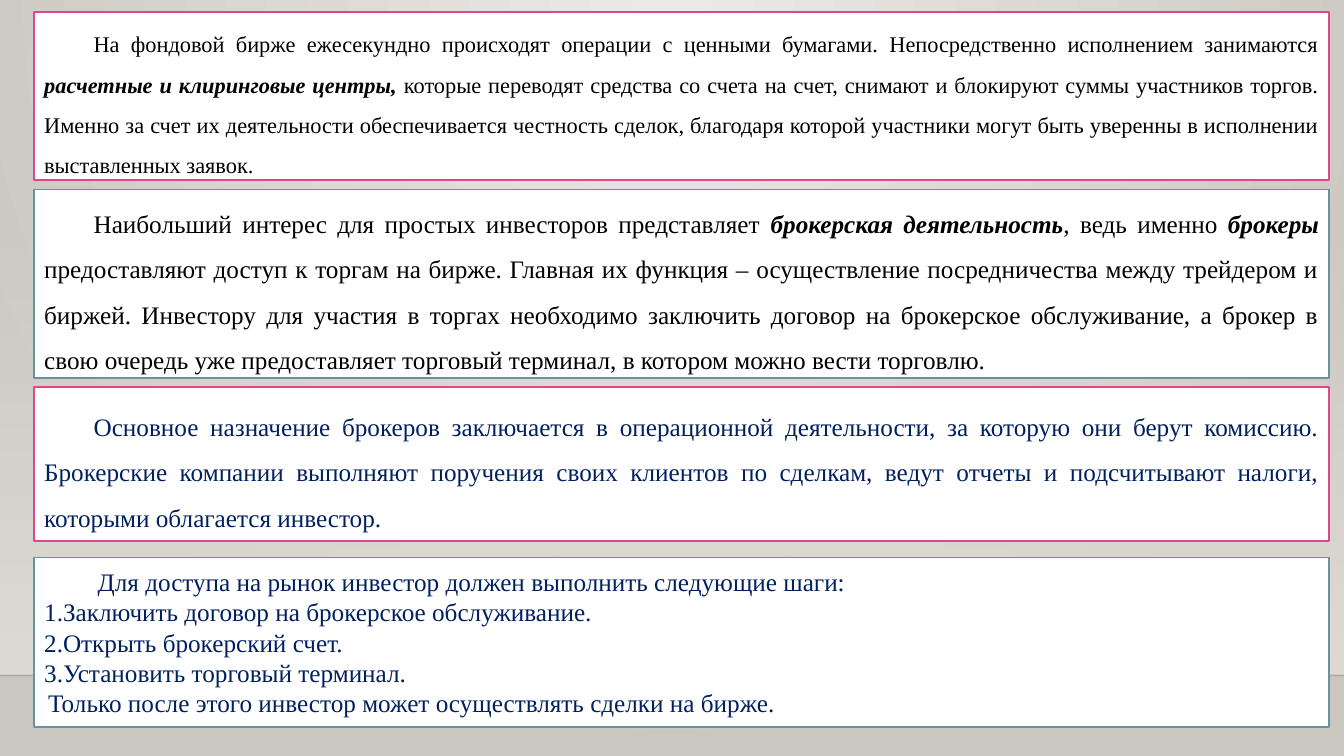
"""Build a slide on settlement centres, brokers and the steps to enter the market."""
from lxml import etree
from pptx import Presentation
from pptx.dml.color import RGBColor
from pptx.enum.shapes import MSO_CONNECTOR, MSO_SHAPE
from pptx.enum.text import MSO_ANCHOR, MSO_AUTO_SIZE, PP_ALIGN
from pptx.oxml.ns import qn
from pptx.util import Inches, Pt

RECTANGLE = MSO_SHAPE.RECTANGLE
STRAIGHT = MSO_CONNECTOR.STRAIGHT
TOP, MIDDLE = MSO_ANCHOR.TOP, MSO_ANCHOR.MIDDLE
GROW, FIXED = MSO_AUTO_SIZE.SHAPE_TO_FIT_TEXT, MSO_AUTO_SIZE.NONE
JUSTIFY = PP_ALIGN.JUSTIFY
PINK, TEAL, BLACK, NAVY = "DE478E", "6892A0", "000000", "002060"


def color(value):
    return RGBColor.from_string(value)


def add_xml(parent, tag, **attributes):
    values = {name: str(value) for name, value in attributes.items()}
    return etree.SubElement(parent, qn(tag), values)


prs = Presentation()
prs.slide_width, prs.slide_height = Inches(13.33), Inches(7.5)
slide = prs.slides.add_slide(prs.slide_layouts[6])

backdrop = slide.background.fill
backdrop.gradient()
for stop, shade in zip(backdrop.gradient_stops, ("ECEAE7", "CAC7C1")):
    stop.color.rgb = color(shade)
    stop.position = 0 if shade == "ECEAE7" else 1
gradient = slide._element.find(".//" + qn("a:gradFill"))
gradient.remove(gradient.find(qn("a:lin")))
glow = add_xml(gradient, "a:path", path="circle")
add_xml(glow, "a:fillToRect", l=43000, t=0, r=43000, b=100000)

wall = slide.shapes.add_shape(RECTANGLE, 0, Inches(2.21), prs.slide_width, Inches(4.49))
wall.shadow.inherit = False
wall.line.fill.background()
wall.fill.gradient()
for position, stop in enumerate(wall.fill.gradient_stops):
    stop.color.rgb = color("DFDBD5")
    stop.position = position
wall.fill.gradient_angle = 270
add_xml(wall._element.find(".//" + qn("a:srgbClr")), "a:alpha", val=0)

horizon = slide.shapes.add_connector(STRAIGHT, 0, Inches(6.7), prs.slide_width, Inches(6.7))
horizon.line.width = Pt(1)
horizon.line.color.rgb = color("000001")
add_xml(horizon._element.find(".//" + qn("a:srgbClr")), "a:alpha", val=20000)
add_xml(horizon._element.spPr, "a:effectLst")

centres = [
    ("На фондовой бирже ежесекундно происходят операции с ценными бумагами. "
     "Непосредственно исполнением занимаются ", False),
    ("расчетные и клиринговые центры,", True),
    (" которые переводят средства со счета на счет, снимают и блокируют суммы участников "
     "торгов. Именно за счет их деятельности обеспечивается честность сделок, благодаря "
     "которой участники могут быть уверенны в исполнении выставленных заявок.", False),
]
brokerage = [
    ("Наибольший интерес для простых инвесторов представляет ", False),
    ("брокерская деятельность", True),
    (", ведь именно ", False),
    ("брокеры ", True),
    ("предоставляют доступ к торгам на бирже. Главная их функция – осуществление "
     "посредничества между трейдером и биржей. Инвестору для участия в торгах необходимо "
     "заключить договор на брокерское обслуживание, а брокер в свою очередь уже "
     "предоставляет торговый терминал, в котором можно вести торговлю.", False),
]
purpose = [
    ("Основное назначение брокеров заключается в операционной деятельности, за которую они "
     "берут комиссию. Брокерские компании выполняют поручения своих клиентов по сделкам, "
     "ведут отчеты и подсчитывают налоги, которыми облагается инвестор.", False),
]
steps = [
    "Заключить договор на брокерское обслуживание.",
    "Открыть брокерский счет.",
    "Установить торговый терминал.",
]
access = [
    (0.04, 0.49, "intro", [("Для доступа на рынок инвестор должен выполнить следующие шаги:", False)]),
    *[(0.04, -0.38, "step", [(step, False)]) for step in steps],
    (0.04, 0, "outcome", [("Только после этого инвестор может осуществлять сделки на бирже.", False)]),
]

panels = [
    (0.12, 1.67, PINK, BLACK, 16, TOP, GROW, 1.5, [(0, 0.49, "intro", centres)]),
    (1.88, 1.87, TEAL, BLACK, 18, MIDDLE, FIXED, 1.5, [(0, 0.49, "intro", brokerage)]),
    (3.84, 1.53, PINK, NAVY, 18, MIDDLE, FIXED, 1.5, [(0, 0.49, "intro", purpose)]),
    (5.53, 1.68, TEAL, NAVY, 18, MIDDLE, FIXED, 1, access),
]
for top, height, border, ink, size, anchor, fit, spacing, paragraphs in panels:
    panel = slide.shapes.add_shape(
        RECTANGLE, Inches(0.34), Inches(top), Inches(12.84), Inches(height))
    panel.shadow.inherit = False
    panel.fill.solid()
    panel.fill.fore_color.rgb = color("FFFFFF")
    panel.line.color.rgb = color(border)
    panel.line.width = Pt(1.25)
    frame = panel.text_frame
    layout = {"word_wrap": True, "vertical_anchor": anchor, "auto_size": fit}
    for name, value in layout.items():
        setattr(frame, name, value)
    for number, (margin, indent, role, runs) in enumerate(paragraphs):
        paragraph = frame.add_paragraph() if number else frame.paragraphs[0]
        paragraph.alignment = JUSTIFY
        paragraph.line_spacing = spacing
        properties = paragraph._p.get_or_add_pPr()
        properties.set("marL", str(Inches(margin)))
        properties.set("indent", str(Inches(indent)))
        if role == "step":
            add_xml(properties, "a:buFont", typeface="+mj-lt")
            add_xml(properties, "a:buAutoNum", type="arabicPeriod")
        if role != "intro":
            tabs = add_xml(properties, "a:tabLst")
            add_xml(tabs, "a:tab", pos=Inches(0.5), algn="l")
        for text, emphasis in runs:
            run = paragraph.add_run()
            run.text = text
            run.font.color.rgb = color(ink)
            style = {"name": "Times New Roman", "size": Pt(size),
                     "bold": emphasis, "italic": emphasis}
            for name, value in style.items():
                setattr(run.font, name, value)

prs.save("out.pptx")
